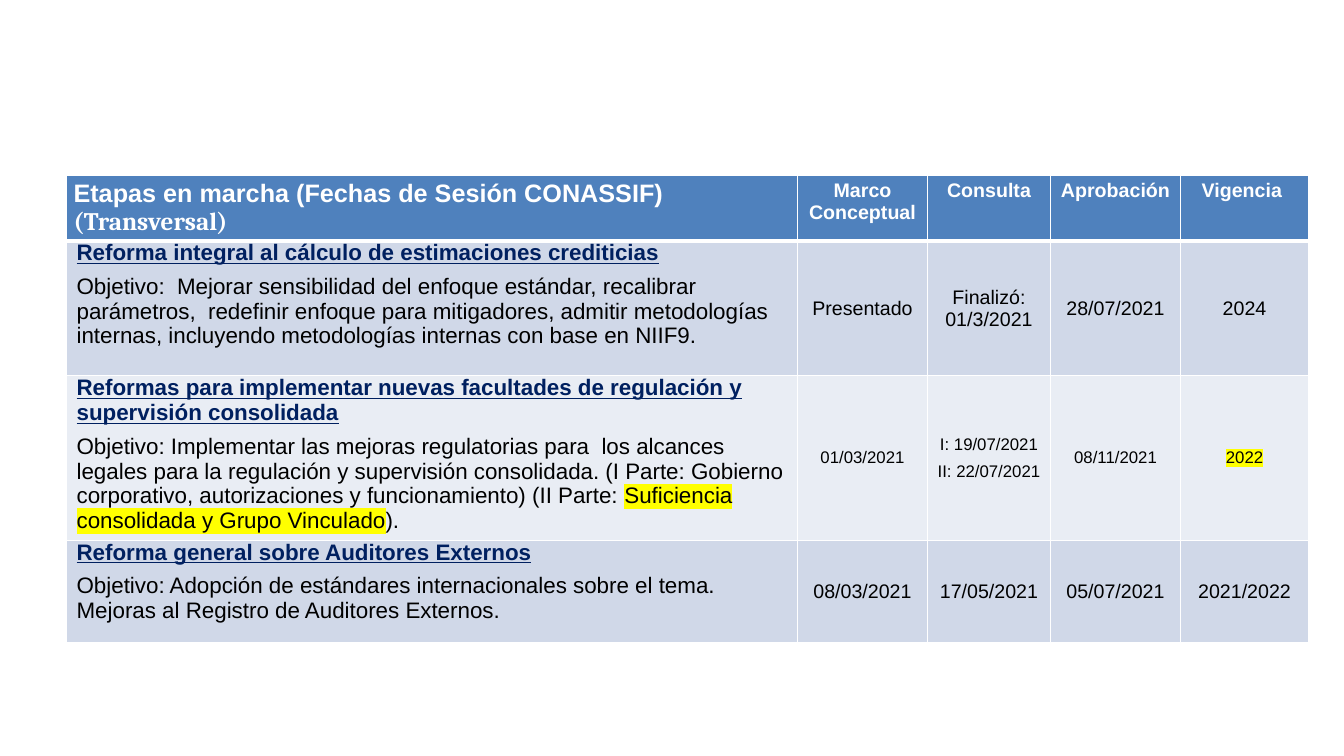
from lxml import etree
from pptx import Presentation
from pptx import util as u
from pptx.dml.color import RGBColor
from pptx.enum import text
from pptx.oxml import ns

EMU_PER_PX = 9144  # 100 px to the inch
WHITE, BLACK, NAVY, YELLOW = "FFFFFF", "000000", "002060", "FFFF00"
HEADER_BLUE, BAND_DARK, BAND_LIGHT = "4F81BD", "D0D8E8", "E9EDF4"


def px(length):
    return u.Emu(length * EMU_PER_PX)


def rgb(value):
    return RGBColor.from_string(value)


def add_solid_fill(parent, color):
    fill = etree.SubElement(parent, ns.qn("a:solidFill"))
    etree.SubElement(fill, ns.qn("a:srgbClr"), val=color)


def add_run(paragraph, words, size=14, font="Arial", color=BLACK,
            bold=False, underline=False, highlight=None):
    run = paragraph.add_run()
    run.text = words
    run.font.size = u.Pt(size)
    run.font.name = font
    run.font.bold = bold
    run.font.underline = underline
    run.font.color.rgb = rgb(color)
    if highlight:
        mark = etree.Element(ns.qn("a:highlight"))
        etree.SubElement(mark, ns.qn("a:srgbClr"), val=highlight)
        run.font.fill  # the highlight follows the text fill
        run._r.rPr.find(ns.qn("a:solidFill")).addnext(mark)


class StageSlide:
    """Holds the table style and the current slide."""

    def __init__(self, deck):
        self.slide = deck.slides.add_slide(deck.slide_layouts[6])

    def table(self, left, top, widths, heights):
        frame = self.slide.shapes.add_table(
            len(heights), len(widths), px(left), px(top),
            px(sum(widths)), px(sum(heights)))
        for column, width in zip(frame.table.columns, widths):
            column.width = px(width)
        for row, height in zip(frame.table.rows, heights):
            row.height = px(height)
        return frame.table

    def borders(self, cell, bottom):
        props = cell._tc.get_or_add_tcPr()
        sides = {"L": 1, "R": 1, "T": 1, "B": bottom}
        for place, (side, points) in enumerate(sides.items()):
            line = etree.Element(ns.qn(f"a:ln{side}"), w=str(u.Pt(points)))
            add_solid_fill(line, WHITE)
            props.insert(place, line)

    def cell(self, cell, paragraphs, fill, margins, centered=True,
             middle=True, gap=6, indent=0, bottom=1):
        """Each paragraph is a list of (words, format) runs."""
        cell.fill.solid()
        cell.fill.fore_color.rgb = rgb(fill)
        side, edge = margins
        cell.margin_left = cell.margin_right = px(side)
        cell.margin_top = cell.margin_bottom = px(edge)
        cell.vertical_anchor = (text.MSO_ANCHOR.MIDDLE if middle
                                else text.MSO_ANCHOR.TOP)
        for number, runs in enumerate(paragraphs):
            frame = cell.text_frame
            paragraph = frame.add_paragraph() if number else frame.paragraphs[0]
            paragraph.alignment = (text.PP_ALIGN.CENTER if centered
                                   else text.PP_ALIGN.LEFT)
            paragraph.space_before = u.Pt(gap if number else 0)
            if indent:
                paragraph._p.get_or_add_pPr().set("marL", str(px(indent)))
            for words, style in runs:
                add_run(paragraph, words, **style)
        self.borders(cell, bottom)


# Content
HEADING = dict(size=14, color=WHITE, bold=True)
STAGES = dict(HEADING, size=18)
HEADERS = [
    [[("Etapas en marcha (Fechas de Sesión CONASSIF)", STAGES)],
     [("(Transversal)", dict(STAGES, font="Cambria"))]],
    [[("Marco", HEADING)], [("Conceptual", HEADING)]],
    [[("Consulta", HEADING)]],
    [[("Aprobación", HEADING)]],
    [[("Vigencia ", HEADING)]],
]
REFORM = dict(size=16, color=NAVY, bold=True, underline=True)
GOAL = dict(size=16)
MARKED = dict(highlight=YELLOW)
# Reform, goal runs, date size, dates, format of the last date
REFORMS = [
    ("Reforma integral al cálculo de estimaciones crediticias",
     [("Objetivo:  Mejorar sensibilidad del enfoque estándar, recalibrar "
       "parámetros,  redefinir enfoque para mitigadores, admitir metodologías "
       "internas, incluyendo metodologías internas con base en NIIF9.", GOAL)],
     14, [["Presentado"], ["Finalizó: 01/3/2021"], ["28/07/2021"], ["2024"]], {}),
    ("Reformas para implementar nuevas facultades de regulación y "
     "supervisión consolidada",
     [("Objetivo: Implementar las mejoras regulatorias para  los alcances "
       "legales para la regulación y supervisión consolidada. (I Parte: "
       "Gobierno corporativo, autorizaciones y funcionamiento) (II Parte: ", GOAL),
      ("Suficiencia consolidada y Grupo Vinculado", dict(GOAL, **MARKED)),
      (").", GOAL)],
     12, [["01/03/2021"], ["I: 19/07/2021", "II: 22/07/2021"],
          ["08/11/2021"], ["2022"]], MARKED),
    ("Reforma general sobre Auditores Externos",
     [("Objetivo: Adopción de estándares internacionales sobre el tema. "
       "Mejoras al Registro de Auditores Externos.", GOAL)],
     14, [["08/03/2021"], ["17/05/2021"], ["05/07/2021"], ["2021/2022"]], {}),
]


def main():
    deck = Presentation()
    deck.slide_width, deck.slide_height = px(1333), px(750)
    page = StageSlide(deck)
    schedule = page.table(66, 174, [725, 129, 122, 129, 127], [56, 134, 163, 102])

    # Header row
    for column, heading in enumerate(HEADERS):
        page.cell(schedule.cell(0, column), heading, HEADER_BLUE, (7, 4),
                  centered=column > 0, middle=False, gap=0, bottom=3)

    # One row per reform
    for row, (reform, goal, size, dates, last) in enumerate(REFORMS, 1):
        band = BAND_DARK if row % 2 else BAND_LIGHT
        page.cell(schedule.cell(row, 0), [[(reform, REFORM)], goal], band, (0, 0),
                  centered=False, middle=False, indent=10)
        for column, lines in enumerate(dates, 1):
            style = dict(size=size, **(last if column == len(dates) else {}))
            page.cell(schedule.cell(row, column),
                      [[(line, style)] for line in lines], band, (8, 4))

    deck.save("out.pptx")


if __name__ == "__main__":
    main()
